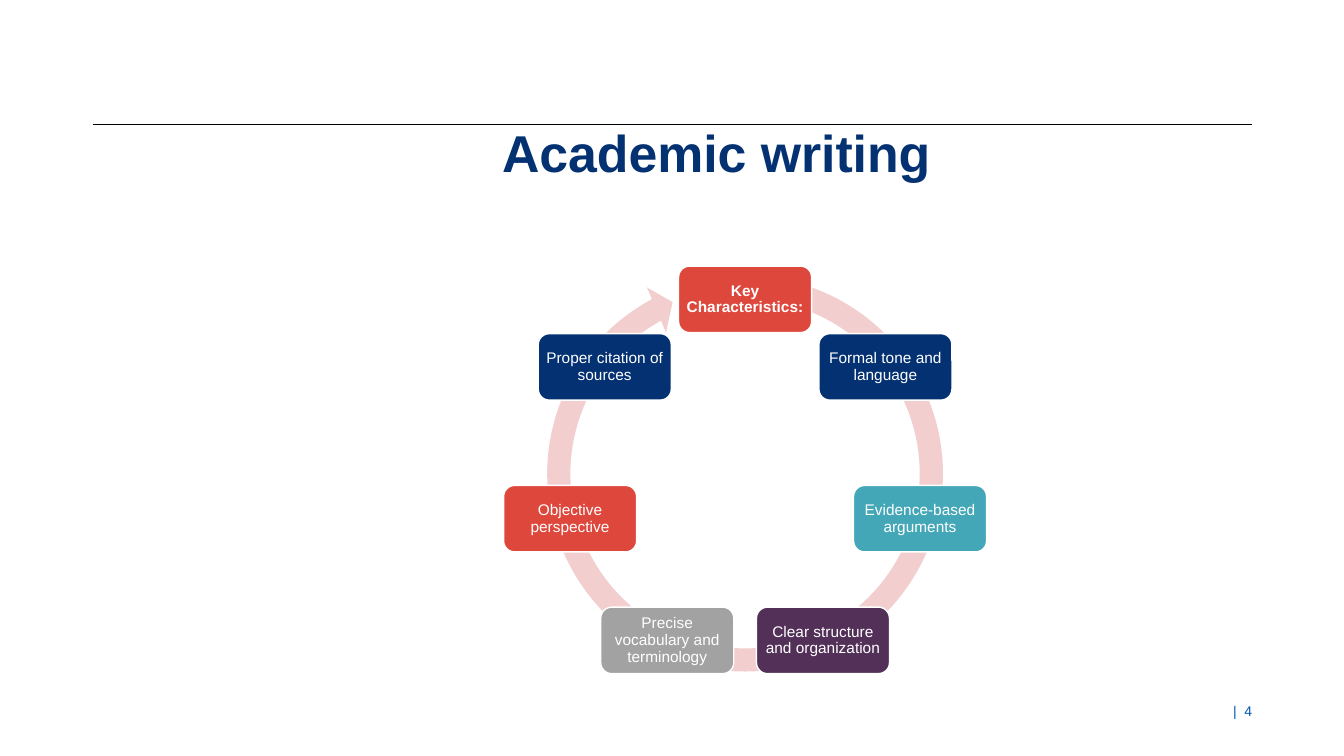
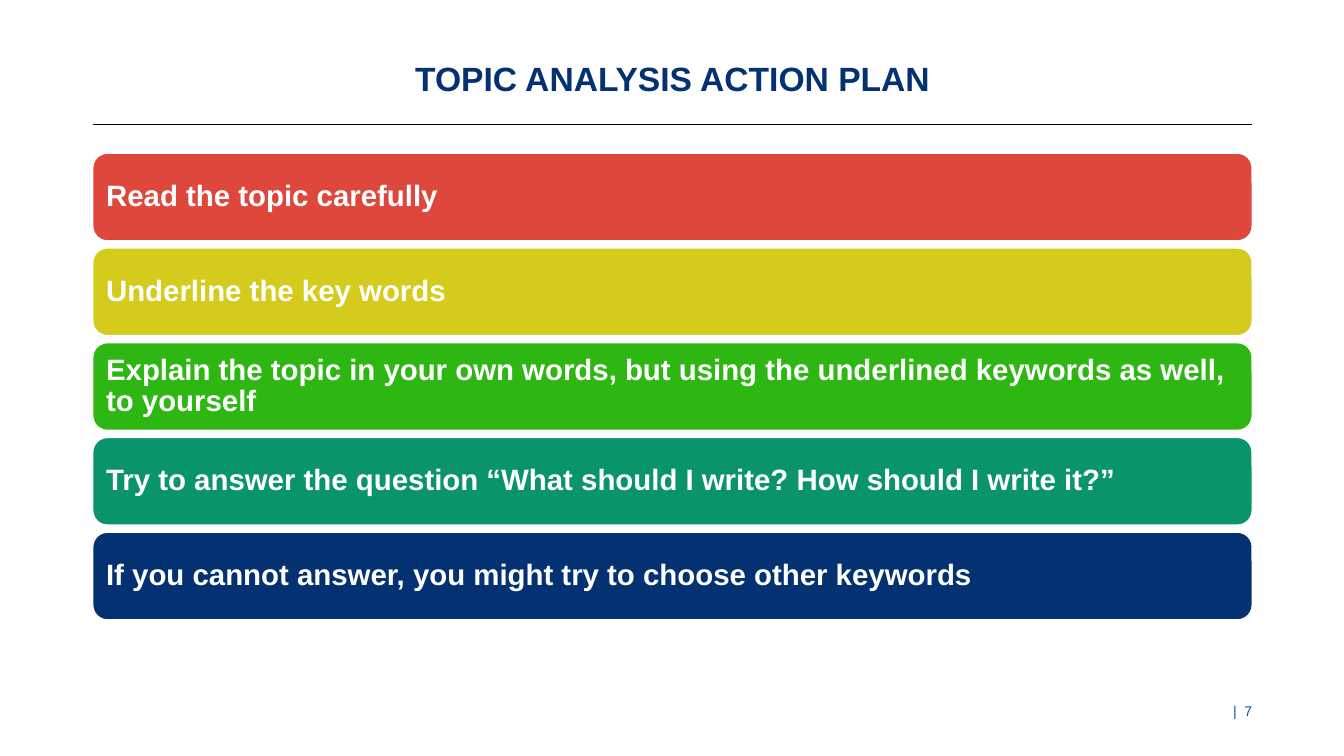
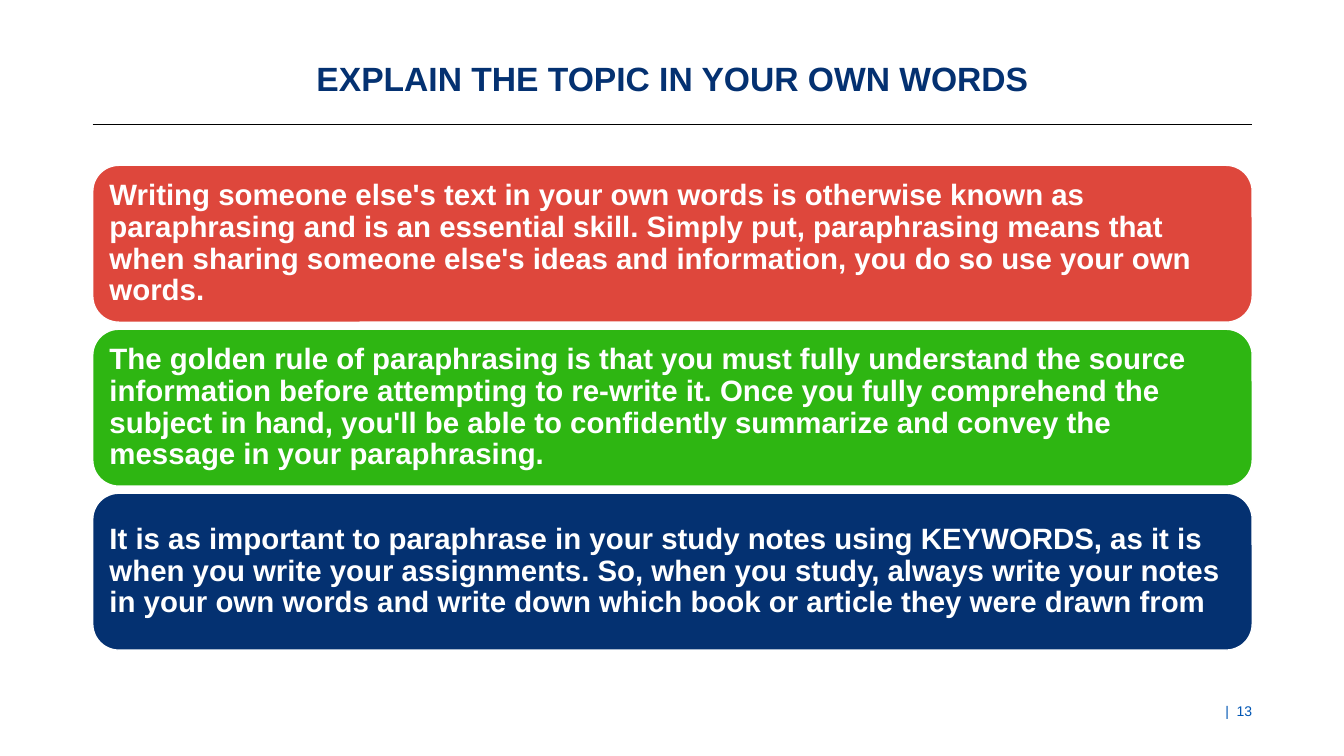
from math import cos, pi, sin

from pptx import Presentation
from pptx.dml.color import RGBColor
from pptx.enum.shapes import MSO_CONNECTOR, MSO_SHAPE
from pptx.enum.text import MSO_ANCHOR, MSO_AUTO_SIZE, PP_ALIGN
from pptx.oxml.ns import qn
from pptx.util import Inches, Pt

# Shared look
FONT = "Arial"
NAVY, RED, GREEN, TEAL = "043171", "DE473C", "2EB612", "0A946C"
YELLOW, CYAN, PLUM, GRAY = "D5CB1C", "43A7B7", "523058", "A2A2A2"
WHITE, BLACK, PINK, FOOTER_BLUE = "FFFFFF", "000000", "F2CFCE", "0056B4"
LEFT, WIDTH = 0.92, 11.5
TITLE_BOX = (LEFT, 0.45, WIDTH, 0.7)

NODES = [
    ("Key Characteristics:", RED),
    ("Formal tone and language", NAVY),
    ("Evidence-based arguments", CYAN),
    ("Clear structure and organization", PLUM),
    ("Precise vocabulary and terminology", GRAY),
    ("Objective perspective", RED),
    ("Proper citation of sources", NAVY),
]
STEPS = [
    ("Read the topic carefully", RED),
    ("Underline the key words", YELLOW),
    ("Explain the topic in your own words, but using the underlined keywords "
     "as well, to yourself", GREEN),
    ("Try to answer the question “What should I write? How should I write it?”", TEAL),
    ("If you cannot answer, you might try to choose other keywords", NAVY),
]
ADVICE = [
    ("Writing someone else's text in your own words is otherwise known as "
     "paraphrasing and is an essential skill. Simply put, paraphrasing means that "
     "when sharing someone else's ideas and information, you do so use your own "
     "words.", RED),
    ("The golden rule of paraphrasing is that you must fully understand the source "
     "information before attempting to re-write it. Once you fully comprehend the "
     "subject in hand, you'll be able to confidently summarize and convey the "
     "message in your paraphrasing.", GREEN),
    ("It is as important to paraphrase in your study notes using KEYWORDS, as it is "
     "when you write your assignments. So, when you study, always write your notes "
     "in your own words and write down which book or article they were drawn from",
     NAVY),
]


def rgb(value):
    return RGBColor.from_string(value)


def inches(box):
    return [Inches(v) for v in box]


def write(sp, text, size, color, bold=False, align=PP_ALIGN.LEFT,
          anchor=MSO_ANCHOR.MIDDLE, margin=0, spacing=0.9):
    """Put one formatted paragraph into a shape."""
    tf = sp.text_frame
    frame = {"word_wrap": True, "auto_size": MSO_AUTO_SIZE.NONE,
             "vertical_anchor": anchor}
    for side in ("left", "top", "right", "bottom"):
        frame["margin_" + side] = Inches(margin)
    for name, value in frame.items():
        setattr(tf, name, value)
    p = tf.paragraphs[0]
    p.alignment, p.line_spacing = align, spacing
    r = p.add_run()
    r.text = text
    for name, value in {"name": FONT, "size": Pt(size), "bold": bold}.items():
        setattr(r.font, name, value)
    r.font.color.rgb = rgb(color)


def add_filled(s, kind, box, fill, line=None):
    sp = s.shapes.add_shape(kind, *inches(box))
    sp.shadow.inherit = False
    sp.fill.solid()
    sp.fill.fore_color.rgb = rgb(fill)
    if line:
        sp.line.color.rgb = rgb(line)
        sp.line.width = Pt(1)
    else:
        sp.line.fill.background()
    return sp


def add_frame(prs, title, number, box=TITLE_BOX, size=24,
              align=PP_ALIGN.CENTER, anchor=MSO_ANCHOR.MIDDLE):
    """New slide with title, rule and page number."""
    s = prs.slides.add_slide(prs.slide_layouts[5])
    sp = s.shapes.title
    sp.left, sp.top, sp.width, sp.height = inches(box)
    write(sp, title, size, NAVY, True, align, anchor)
    rule = s.shapes.add_connector(
        MSO_CONNECTOR.STRAIGHT, *inches((LEFT, 1.23, LEFT + WIDTH, 1.23)))
    rule.line.color.rgb = rgb(BLACK)
    rule.line.width = Pt(0.5)
    props = rule._element.spPr
    props.append(props.makeelement(qn("a:effectLst"), {}))
    page = s.shapes.add_textbox(*inches((5.26, 6.97, 7.16, 0.17)))
    write(page, f"|  {number}", 10, FOOTER_BLUE, align=PP_ALIGN.RIGHT,
          anchor=MSO_ANCHOR.TOP, spacing=1)
    return s


def add_cycle(s, nodes, box):
    """Circular arrow with nodes spaced evenly around it, clockwise from the top."""
    left, top, side, _ = box
    ring = add_filled(s, MSO_SHAPE.CIRCULAR_ARROW, box, PINK)
    for i, value in enumerate((0.055, 3.307, 144.952, 169.62, 0.058)):
        ring.adjustments[i] = value
    node_w, node_h, radius = 1.32, 0.66, 1.78
    cx, cy = left + side / 2, top + side / 2 + 0.05
    for i, (text, fill) in enumerate(nodes):
        angle = 2 * pi * i / len(nodes)
        x = cx + radius * sin(angle) - node_w / 2
        y = cy - radius * cos(angle) - node_h / 2
        sp = add_filled(s, MSO_SHAPE.ROUNDED_RECTANGLE, (x, y, node_w, node_h), fill, WHITE)
        write(sp, text, 11, WHITE, i == 0, PP_ALIGN.CENTER, margin=0.04)


def add_bars(s, bars, box, gap=0.07):
    """Equal rounded bars stacked to fill the box."""
    left, top, width, height = box
    bar_h = (height - gap * (len(bars) - 1)) / len(bars)
    for i, (text, fill) in enumerate(bars):
        bar = (left, top + i * (bar_h + gap), width, bar_h)
        sp = add_filled(s, MSO_SHAPE.ROUNDED_RECTANGLE, bar, fill, WHITE)
        write(sp, text, 21, WHITE, True, margin=0.09)


def main():
    prs = Presentation()
    prs.slide_width, prs.slide_height = Inches(13.33), Inches(7.5)

    s = add_frame(prs, "Academic writing", 4, (4.98, 0.6, 7.43, 1.83), 37,
                  PP_ALIGN.LEFT, MSO_ANCHOR.BOTTOM)
    s.shapes.title.text_frame.margin_bottom = Inches(0.61)
    add_cycle(s, NODES, (5.3, 2.61, 4.18, 4.18))

    s = add_frame(prs, "TOPIC ANALYSIS ACTION PLAN", 7)
    add_bars(s, STEPS, (LEFT, 1.52, WIDTH, 4.63))

    s = add_frame(prs, "EXPLAIN THE TOPIC IN YOUR OWN WORDS", 13)
    add_bars(s, ADVICE, (LEFT, 1.64, WIDTH, 4.81))

    prs.save("out.pptx")


if __name__ == "__main__":
    main()
